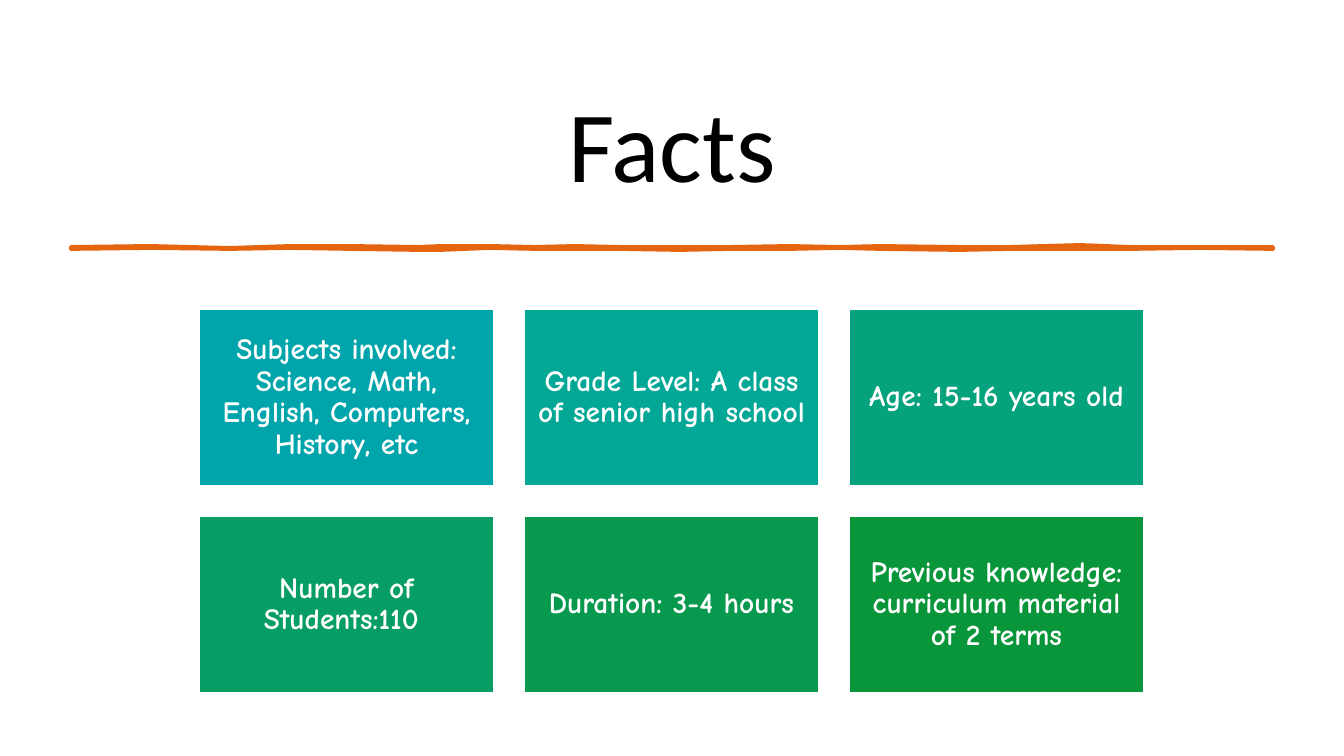
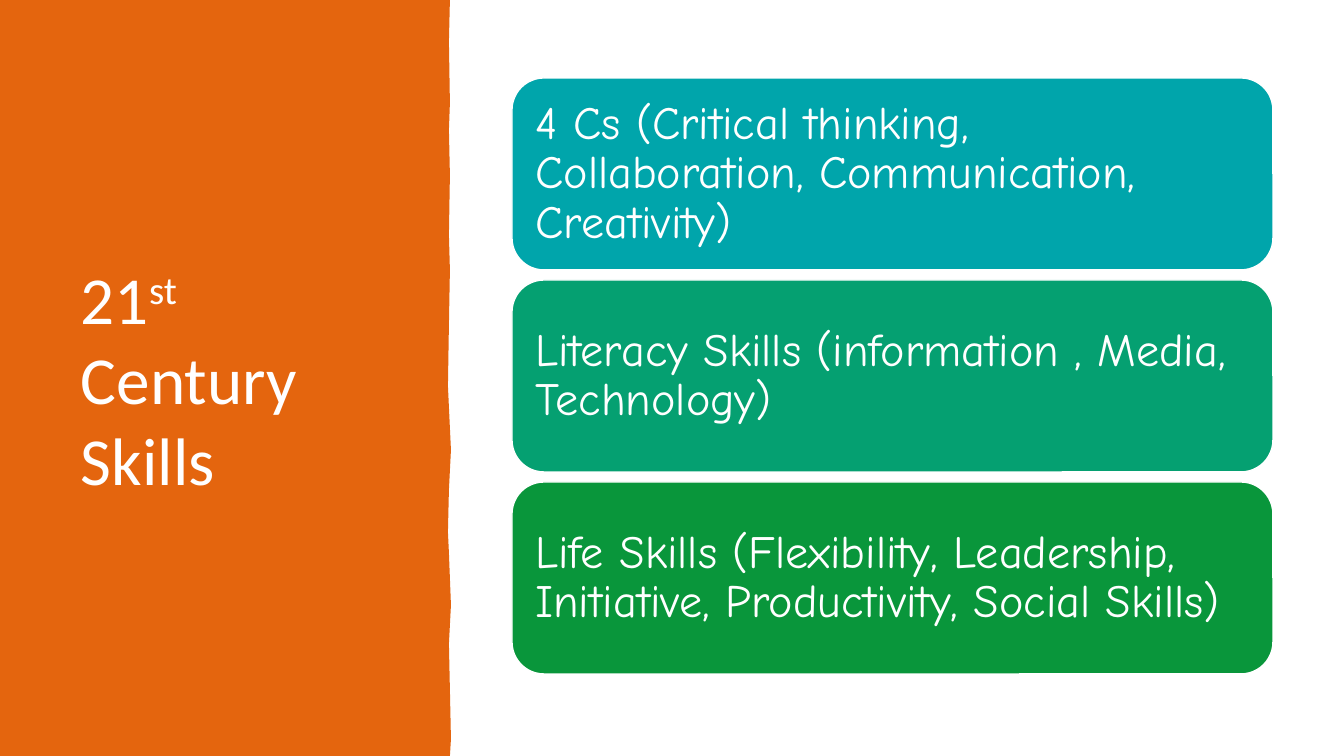
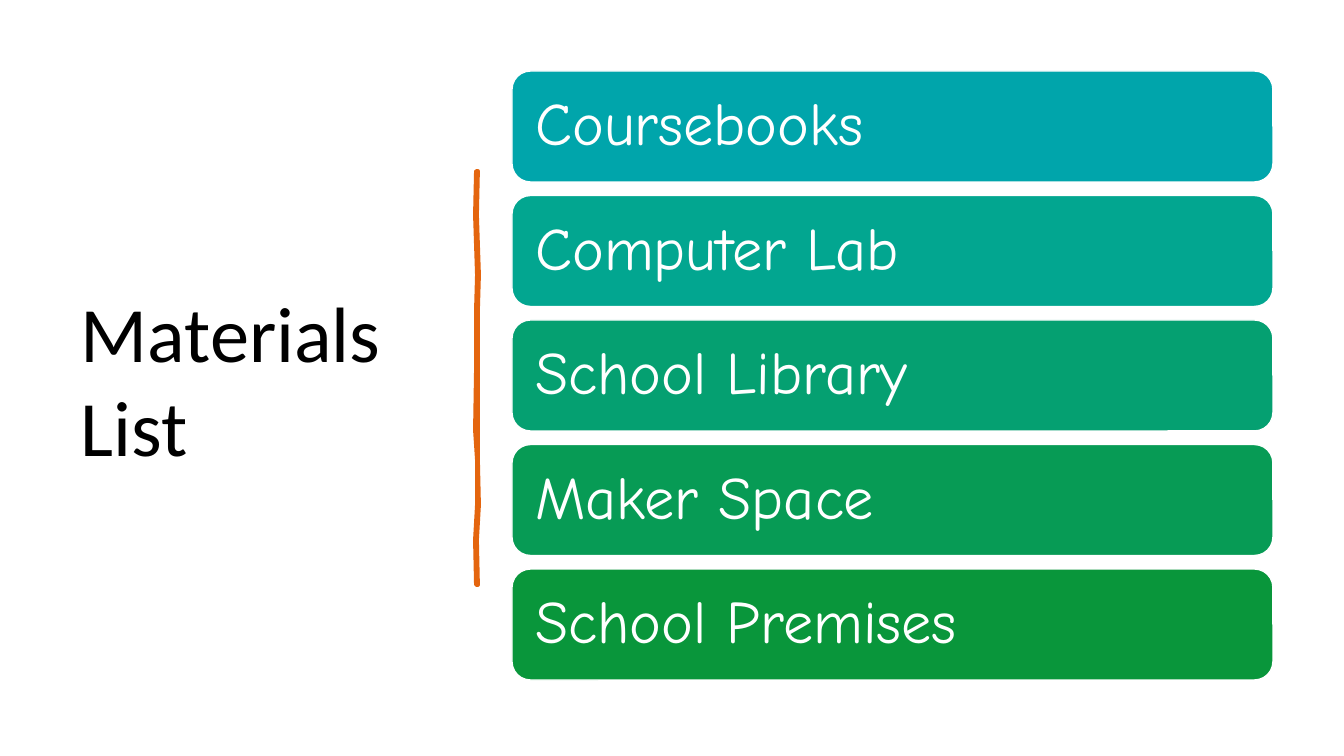
from pptx import Presentation
from pptx.dml.color import RGBColor
from pptx.enum.shapes import MSO_SHAPE
from pptx.enum.text import MSO_ANCHOR, PP_ALIGN
from pptx.util import Emu, Pt

RECT, ROUNDED = MSO_SHAPE.RECTANGLE, MSO_SHAPE.ROUNDED_RECTANGLE
LEFT, CENTER = PP_ALIGN.LEFT, PP_ALIGN.CENTER
MIDDLE = MSO_ANCHOR.MIDDLE

PAGE_WIDTH, PAGE_HEIGHT = 1344, 756
SCALE = 12192000 / PAGE_WIDTH

ORANGE, WHITE, BLACK = "E4650E", "FFFFFF", "000000"
TITLE_FONT, CARD_FONT = "Calibri", "Comic Neue"

FACTS = [
    ("Subjects involved: Science, Math, English, Computers, History, etc", "00A5AB"),
    ("Grade Level: A class of senior high school", "02A796"),
    ("Age: 15-16 years old", "04A27D"),
    ("Number of Students:110 ", "069E65"),
    ("Duration: 3-4 hours", "079A4F"),
    ("Previous knowledge: curriculum material of 2 terms", "09963B"),
]
SKILLS = [
    ("4 Cs (Critical thinking, Collaboration, Communication, Creativity)", "00A5AB"),
    ("Literacy Skills (information , Media, Technology)", "05A071"),
    ("Life Skills (Flexibility, Leadership, Initiative, Productivity, Social Skills)",
     "09963B"),
]
MATERIALS = [
    ("Coursebooks", "00A5AB"),
    ("Computer Lab", "02A690"),
    ("School Library", "05A071"),
    ("Maker Space", "079B55"),
    ("School Premises", "09963B"),
]

# Card area is left, top, right, bottom; gaps follow from the card size.
FACT_CARDS = dict(area=(199, 309, 1144, 693), size=(295, 177), columns=3,
                  preset=RECT, inset=9, align=CENTER, font_size=21, bold=True)
SKILL_CARDS = dict(area=(512, 78, 1273, 674), size=(761, 192), columns=1,
                   preset=ROUNDED, inset=14, align=LEFT, font_size=33, bold=False)
MATERIAL_CARDS = dict(area=(512, 71, 1273, 680), size=(761, 111), columns=1,
                      preset=ROUNDED, inset=18, align=LEFT, font_size=43, bold=False)

# Brush strokes: position along the stroke, then offset of each edge from its axis.
FACTS_RULE = [
    (71, -1, 1), (150, -2, 0), (230, 0, 1), (290, -2, 0), (350, -2, 1),
    (420, -1, 2), (440, -2, 2), (490, -2, 0), (535, -1, 1), (575, -2, 1),
    (620, -1, 1), (680, -1, 2), (730, -1, 1), (790, -2, 1), (840, -1, 0),
    (880, -2, 1), (960, -1, 2), (1010, -1, 1), (1080, -3, 1), (1130, -1, 1),
    (1200, -1, 0), (1273, -1, 1),
]
MATERIALS_RULE = [
    (171, -1, 1), (215, -2, 0), (275, 0, 2), (310, -1, 1), (370, -1, 1),
    (430, -2, 1), (460, 0, 1), (505, 0, 2), (540, -2, 0), (585, -1, 1),
]
PANEL_EDGE = [
    (450, 0), (449, 42), (450, 103), (449, 130), (450, 175), (449, 235),
    (450, 270), (449, 325), (448, 386), (451, 450), (449, 490), (448, 532),
    (449, 553), (451, 605), (449, 644), (450, 690), (451, 739), (450, 756),
]


def px(value):
    return Emu(round(value * SCALE))


def color(hex_text):
    return RGBColor.from_string(hex_text)


def set_all(target, **values):
    for name, value in values.items():
        setattr(target, name, value)


def paint(shape, fill, line=None, line_width=1):
    shape.shadow.inherit = False
    shape.fill.solid()
    shape.fill.fore_color.rgb = color(fill)
    if line:
        shape.line.color.rgb = color(line)
        shape.line.width = Pt(line_width)
    else:
        shape.line.fill.background()


def add_outline(page, points, **line):
    corners = [(px(x), px(y)) for x, y in points]
    builder = page.shapes.build_freeform(*corners[0], scale=1.0)
    builder.add_line_segments(corners[1:], close=True)
    paint(builder.convert_to_shape(), ORANGE, **line)


def add_rule(page, knots, axis, vertical=False):
    near = [(along, axis + low) for along, low, high in knots]
    far = [(along, axis + high) for along, low, high in knots]
    points = near + far[::-1]
    if vertical:
        points = [(x, y) for y, x in points]
    add_outline(page, points, line=ORANGE, line_width=2.75)


def add_title(page, spans, place, font_size, hex_text=BLACK, align=LEFT):
    """Spans are (text, baseline) pairs, the baseline in thousandths of a percent."""
    box = page.shapes.add_textbox(*map(px, place))
    set_all(box.text_frame, word_wrap=True, vertical_anchor=MIDDLE)
    para = box.text_frame.paragraphs[0]
    para.alignment = align
    for text, baseline in spans:
        span = para.add_run()
        span.text = text
        set_all(span.font, name=TITLE_FONT, size=Pt(font_size))
        span.font.color.rgb = color(hex_text)
        if baseline:
            span._r.get_or_add_rPr().set("baseline", str(baseline))


def add_cards(page, cards, area, size, columns, preset, inset, align, font_size, bold):
    left, top, right, bottom = area
    width, height = size
    rows = len(cards) // columns
    step_x = (right - left - width) / max(columns - 1, 1)
    step_y = (bottom - top - height) / max(rows - 1, 1)
    for index, (text, fill) in enumerate(cards):
        row, column = divmod(index, columns)
        place = (left + column * step_x, top + row * step_y, width, height)
        card = page.shapes.add_shape(preset, *map(px, place))
        paint(card, fill, line=WHITE)
        frame = card.text_frame
        set_all(frame, word_wrap=True, vertical_anchor=MIDDLE,
                margin_left=px(inset), margin_right=px(inset),
                margin_top=px(inset), margin_bottom=px(inset))
        para = frame.paragraphs[0]
        set_all(para, alignment=align, line_spacing=0.9)
        span = para.add_run()
        span.text = text
        set_all(span.font, name=CARD_FONT, size=Pt(font_size), bold=bold)
        span.font.color.rgb = color(WHITE)


def build_facts(page):
    add_title(page, [("Facts", 0)], (70, 70, 1204, 145), 72, align=CENTER)
    add_rule(page, FACTS_RULE, axis=248)
    add_cards(page, FACTS, **FACT_CARDS)


def build_skills(page):
    add_outline(page, [(0, 0), *PANEL_EDGE, (0, PAGE_HEIGHT)])
    add_title(page, [("21", 0), ("st", 30000), (" Century Skills", 0)],
              (71, 70, 341, 616), 48, WHITE)
    add_cards(page, SKILLS, **SKILL_CARDS)


def build_materials(page):
    add_title(page, [("Materials List", 0)], (71, 70, 376, 616), 56)
    add_rule(page, MATERIALS_RULE, axis=477, vertical=True)
    add_cards(page, MATERIALS, **MATERIAL_CARDS)


def main():
    deck = Presentation()
    set_all(deck, slide_width=px(PAGE_WIDTH), slide_height=px(PAGE_HEIGHT))
    blank = deck.slide_layouts[6]
    for build in (build_facts, build_skills, build_materials):
        page = deck.slides.add_slide(blank)
        backdrop = page.shapes.add_shape(RECT, 0, 0, px(PAGE_WIDTH), px(PAGE_HEIGHT))
        paint(backdrop, WHITE)
        build(page)
    deck.save("out.pptx")


if __name__ == "__main__":
    main()
